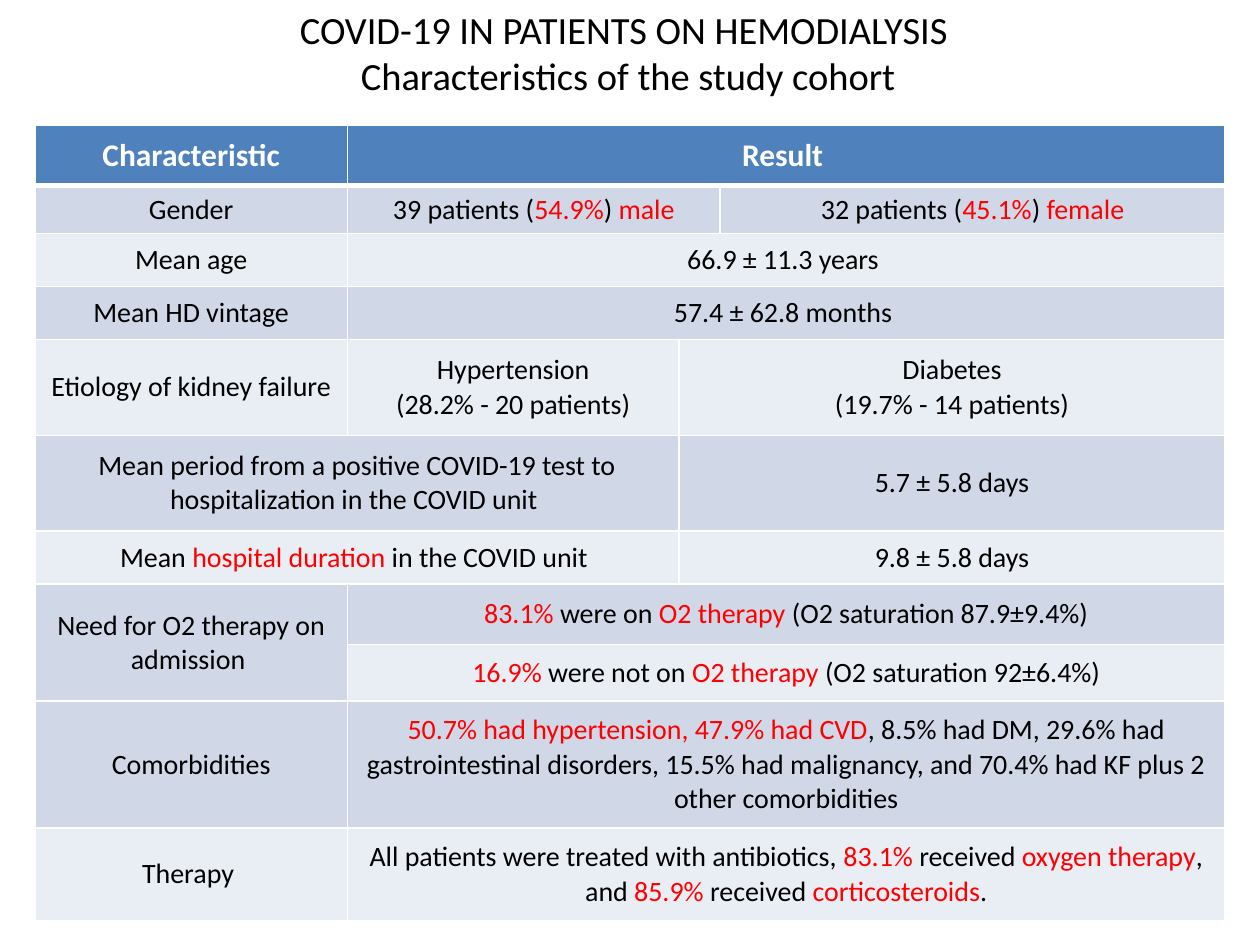
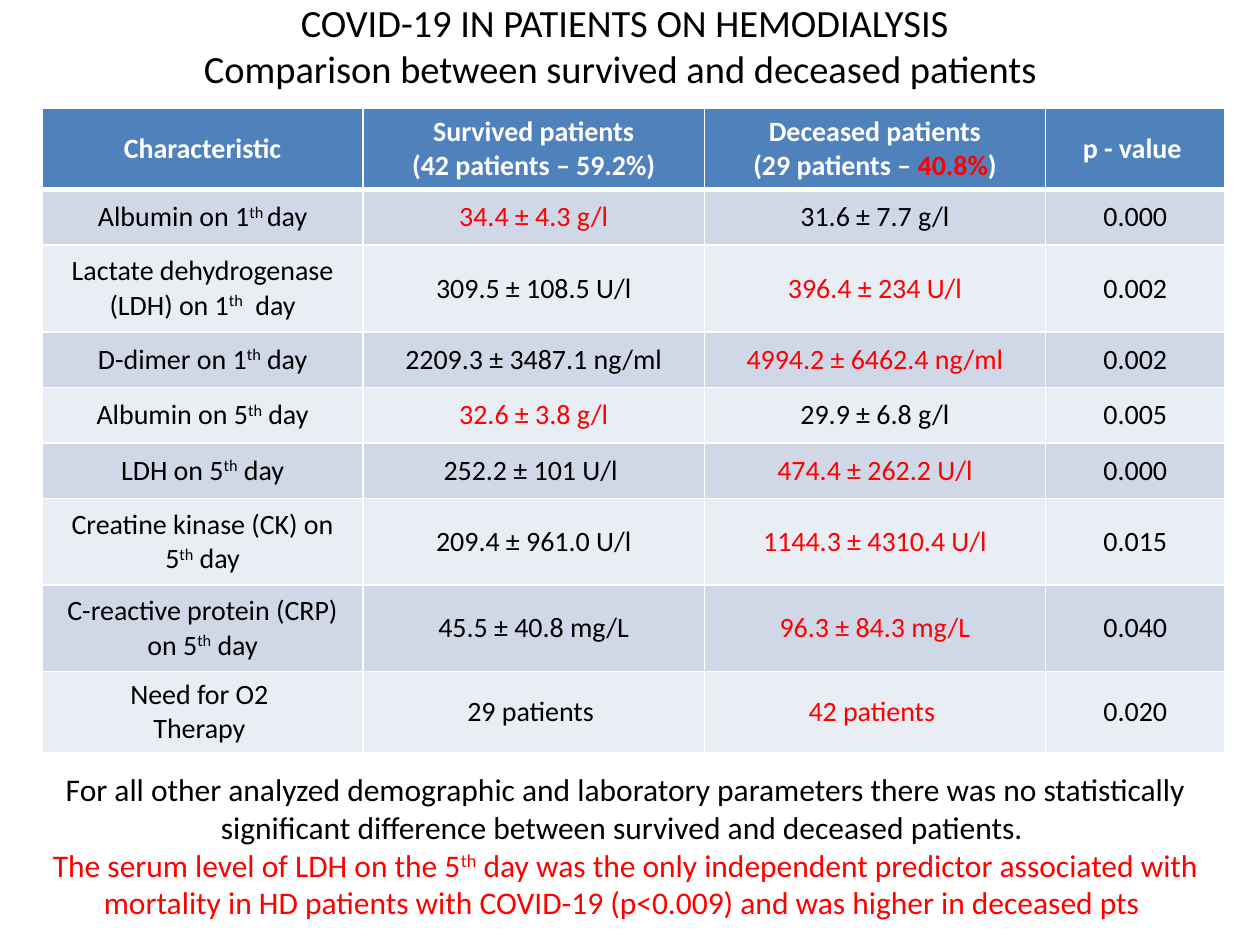
from dataclasses import dataclass
from lxml import etree
from pptx import Presentation
from pptx.dml.color import RGBColor
from pptx.enum.text import MSO_ANCHOR, MSO_AUTO_SIZE, PP_ALIGN
from pptx.oxml.ns import qn
from pptx.util import Pt

CENTER = PP_ALIGN.CENTER
MIDDLE = MSO_ANCHOR.MIDDLE
NO_FIT = MSO_AUTO_SIZE.NONE

FONT = "Calibri"
BLACK = RGBColor(0x00, 0x00, 0x00)
WHITE = RGBColor(0xFF, 0xFF, 0xFF)
RED = RGBColor(0xFF, 0x00, 0x00)
BLUE = RGBColor(0x4F, 0x81, 0xBD)
DARK = RGBColor(0xD0, 0xD8, 0xE8)
LIGHT = RGBColor(0xE9, 0xED, 0xF4)

TOPIC = "COVID-19 IN PATIENTS ON HEMODIALYSIS"


@dataclass(frozen=True)
class Box:
    left: float
    top: float
    width: float
    height: float


@dataclass(frozen=True)
class Style:
    size: float
    color: RGBColor = BLACK
    bold: bool = False


@dataclass(frozen=True)
class Cell:
    text: str
    wide: int = 1
    tall: int = 1


@dataclass(frozen=True)
class Row:
    height: float
    cells: tuple[Cell | None, ...]  # None: covered by the cell above


@dataclass(frozen=True)
class Grid:
    left: float
    top: float
    cols: tuple[float, ...]
    head: Style
    rows: tuple[Row, ...]


TITLE = Style(22)
BODY = Style(16)
NOTE = Style(18)


# Text: *red*, ^superscript^, one paragraph per line
def write(frame, text: str, style: Style) -> None:
    for i, line in enumerate(text.split("\n")):
        para = frame.add_paragraph() if i else frame.paragraphs[0]
        para.alignment = CENTER
        for j, part in enumerate(line.split("*")):
            for k, piece in enumerate(part.split("^")):
                if not piece:
                    continue
                run = para.add_run()
                run.text = piece
                font = run.font
                font.name, font.size, font.bold = FONT, Pt(style.size), style.bold
                font.color.rgb = RED if j % 2 else style.color
                if k % 2:
                    run._r.get_or_add_rPr().set("baseline", "30000")


def place(shape, box: Box) -> None:
    shape.left, shape.top = Pt(box.left), Pt(box.top)
    shape.width, shape.height = Pt(box.width), Pt(box.height)


def add_page(deck, box: Box, title: str):
    page = deck.slides.add_slide(deck.slide_layouts[5])
    shape = page.shapes.title
    place(shape, box)
    frame = shape.text_frame
    frame.auto_size, frame.vertical_anchor = NO_FIT, MIDDLE
    write(frame, title, TITLE)
    return page


# Table
def add_edges(cell, top: float, bottom: float) -> None:
    props = cell._tc.get_or_add_tcPr()
    for side, width in (("L", 1), ("R", 1), ("T", top), ("B", bottom)):
        line = etree.SubElement(props, qn(f"a:ln{side}"), w=str(Pt(width)))
        fill = etree.SubElement(line, qn("a:solidFill"))
        etree.SubElement(fill, qn("a:srgbClr"), val=str(WHITE))


def add_grid(page, grid: Grid) -> None:
    height = sum(row.height for row in grid.rows)
    table = page.shapes.add_table(
        len(grid.rows), len(grid.cols), Pt(grid.left), Pt(grid.top),
        Pt(sum(grid.cols)), Pt(height)).table
    for col, width in zip(table.columns, grid.cols):
        col.width = Pt(width)
    for r, row in enumerate(grid.rows):
        table.rows[r].height = Pt(row.height)
        band = BLUE if r == 0 else DARK if r % 2 else LIGHT
        c = 0
        for item in row.cells:
            if item is None:
                c += 1
                continue
            cell = table.cell(r, c)
            if item.wide > 1 or item.tall > 1:
                cell.merge(table.cell(r + item.tall - 1, c + item.wide - 1))
            add_edges(cell, 3 if r == 1 else 1, 3 if r == 0 else 1)
            cell.fill.solid()
            cell.fill.fore_color.rgb = band
            cell.vertical_anchor = MIDDLE
            write(cell.text_frame, item.text, BODY if r else grid.head)
            c += item.wide


def full(height: float, name: str, text: str) -> Row:
    return Row(height, (Cell(name), Cell(text, 3)))


def half(height: float, name: str, text: str) -> Row:
    return Row(height, (Cell(name, 2), Cell(text, 2)))


def plain(height: float, *texts: str) -> Row:
    return Row(height, tuple(Cell(text) for text in texts))


# Slide 1: study cohort
COHORT = Grid(20, 71.5, (178.5, 189.5, 23.5, 288.5), Style(18, WHITE, True), (
    full(34.5, "Characteristic", "Result "),
    Row(27.5, (Cell("Gender"),
               Cell("39 patients (*54.9%*) *male*", 2),
               Cell("32 patients (*45.1%*) *female*"))),
    full(30.25, "Mean age", "66.9 ± 11.3 years "),
    full(30.25, "Mean HD vintage", "57.4 ± 62.8 months "),
    Row(54.75, (Cell("Etiology of kidney failure"),
                Cell("Hypertension\n(28.2% - 20 patients)"),
                Cell("Diabetes\n(19.7% - 14 patients)", 2))),
    half(54.75, "Mean period from a positive COVID-19 test to "
         "hospitalization in the COVID unit ", "5.7 ± 5.8 days"),
    half(30.25, "Mean *hospital duration* in the COVID unit ",
         "9.8 ± 5.8 days"),
    Row(34.5, (Cell("Need for O2 therapy on admission ", 1, 2),
               Cell("*83.1% *were on *O2 therapy *"
                    "(O2 saturation 87.9±9.4%)", 3))),
    Row(32.5, (None, Cell("*16.9% *were not on *O2 therapy *"
                          "(O2 saturation 92±6.4%)", 3))),
    full(72.5, "Comorbidities",
         "*50.7% had hypertension, 47.9% had CVD*, 8.5% had DM, 29.6% had "
         "gastrointestinal disorders, 15.5% had malignancy, and 70.4% had "
         "KF plus 2 other comorbidities"),
    full(53, "Therapy ",
         "All patients were treated with antibiotics, *83.1% *received "
         "*oxygen therapy*, and *85.9%* received *corticosteroids*."),
))

# Slide 2: survived and deceased patients
OUTCOME = Grid(24, 62, (183.5, 195, 195, 102.5), Style(16, WHITE, True), (
    plain(45.5, "Characteristic", "Survived patients\n(42 patients – 59.2%)",
          "Deceased patients\n(29 patients –* 40.8%*)", "p - value "),
    plain(31.75, "Albumin on 1^th ^day", "*34.4 ± 4.3 g/l*",
          "31.6 ± 7.7 g/l", "0.000"),
    plain(49.5, "Lactate dehydrogenase (LDH) on 1^th^  day",
          "309.5 ± 108.5 U/l", "*396.4 ± 234 U/l*", "0.002"),
    plain(31.75, "D-dimer on 1^th^ day", "2209.3 ± 3487.1 ng/ml",
          "*4994.2 ± 6462.4 ng/ml*", "0.002"),
    plain(31.75, "Albumin on 5^th^ day", "*32.6 ± 3.8 g/l*",
          "29.9 ± 6.8 g/l", "0.005"),
    plain(31.75, "LDH on 5^th^ day", "252.2 ± 101 U/l ",
          "*474.4 ± 262.2 U/l*", "0.000"),
    plain(49.5, "Creatine kinase (CK) on 5^th^ day", "209.4 ± 961.0 U/l",
          "*1144.3 ± 4310.4 U/l*", "0.015"),
    plain(49.5, "C-reactive protein (CRP) on 5^th^ day", "45.5 ± 40.8 mg/L",
          "*96.3 ± 84.3 mg/L*", "0.040"),
    plain(46, "Need for O2 \nTherapy ", "29 patients ", "*42 patients *",
          "0.020"),
))
FINDING = (
    "For all other analyzed demographic and laboratory parameters there was "
    "no statistically significant difference between survived and deceased "
    "patients. \n"
    "*The serum level of LDH on the 5^th^ day was the only independent "
    "predictor associated with mortality in HD patients with COVID-19 "
    "(p<0.009) and was higher in deceased pts *")


def main() -> None:
    deck = Presentation()
    deck.slide_width, deck.slide_height = Pt(720), Pt(540)

    page = add_page(deck, Box(25, -0.5, 663, 60.5),
                    f"{TOPIC}\n Characteristics of the study cohort")
    add_grid(page, COHORT)

    page = add_page(
        deck, Box(33, 9.5, 648, 33),
        f"{TOPIC}\nComparison between survived and deceased patients ")
    add_grid(page, OUTCOME)
    note = page.shapes.add_textbox(Pt(8.5), Pt(436.5), Pt(698), Pt(94.5))
    note.text_frame.word_wrap = True
    write(note.text_frame, FINDING, NOTE)

    deck.save("out.pptx")


if __name__ == "__main__":
    main()
